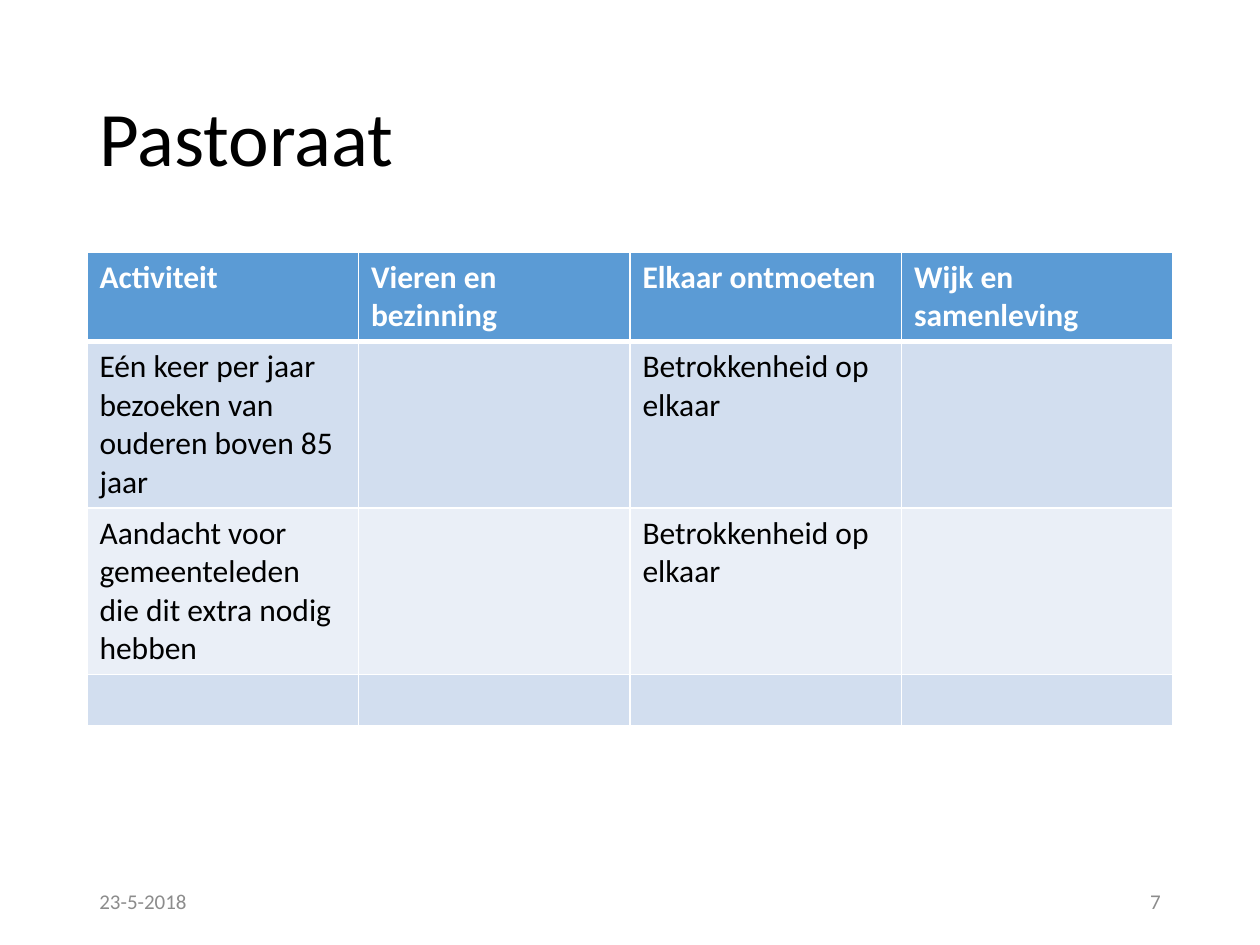
from dataclasses import dataclass

from lxml import etree
from pptx import Presentation
from pptx.dml.color import RGBColor
from pptx.enum import text
from pptx.oxml.ns import qn
from pptx.util import Inches, Pt

FONT = "Calibri"
WHITE, BLACK, GREY = "FFFFFF", "000000", "8C8C8C"
HEADER_FILL = "5B9BD5"
BAND_FILLS = ("D2DEEF", "EAEFF7")
LEFT, WIDTH = 0.69, 8.62
FOOTER_WIDTH = 2.25


@dataclass
class TableRow:
    height: float
    cells: tuple


@dataclass
class FooterItem:
    left: float
    wording: str
    alignment: text.PP_ALIGN


ROWS = (
    TableRow(0.7, ("Activiteit", "Vieren en bezinning", "Elkaar ontmoeten",
                   "Wijk en samenleving")),
    TableRow(1.32, ("Eén keer per jaar bezoeken van ouderen boven 85 jaar", "",
                    "Betrokkenheid op elkaar", "")),
    TableRow(1.32, ("Aandacht voor gemeenteleden die dit extra nodig hebben", "",
                    "Betrokkenheid op elkaar", "")),
    TableRow(0.4, ("", "", "", "")),
)
FOOTER = (
    FooterItem(LEFT, "23-5-2018", text.PP_ALIGN.LEFT),
    FooterItem(LEFT + WIDTH - FOOTER_WIDTH, "7", text.PP_ALIGN.RIGHT),
)


def color(value: str) -> RGBColor:
    return RGBColor.from_string(value)


def write(frame, wording: str, size: float, ink: str, bold: bool = False,
          alignment=text.PP_ALIGN.LEFT) -> None:
    frame.text = wording
    paragraph = frame.paragraphs[0]
    paragraph.alignment = alignment
    paragraph.font.size = Pt(size)
    for run in paragraph.runs:
        run.font.name = FONT
        run.font.size = Pt(size)
        run.font.bold = bold
        run.font.color.rgb = color(ink)


def set_borders(cell, top: float, bottom: float) -> None:
    """Give the cell white borders, 1 pt at the sides."""
    properties = cell._tc.get_or_add_tcPr()
    widths = {"a:lnL": 1, "a:lnR": 1, "a:lnT": top, "a:lnB": bottom}
    for position, (tag, width) in enumerate(widths.items()):
        line = etree.Element(qn(tag), w=str(Pt(width)))
        fill = etree.SubElement(line, qn("a:solidFill"))
        etree.SubElement(fill, qn("a:srgbClr"), val=WHITE)
        properties.insert(position, line)


def add_title(slide, wording: str) -> None:
    title = slide.shapes.title
    title.left, title.top = Inches(LEFT), Inches(0.4)
    title.width, title.height = Inches(WIDTH), Inches(1.45)
    title.text_frame.vertical_anchor = text.MSO_ANCHOR.MIDDLE
    write(title.text_frame, wording, 44, BLACK)
    title.text_frame.paragraphs[0].line_spacing = 0.9


def add_activity_table(slide, rows: tuple) -> None:
    column_count = len(rows[0].cells)
    height = sum(row.height for row in rows)
    table = slide.shapes.add_table(
        len(rows), column_count, Inches(LEFT), Inches(2),
        Inches(WIDTH), Inches(height)).table
    for column in table.columns:
        column.width = Inches(WIDTH / column_count)
    for row_index, row in enumerate(rows):
        table.rows[row_index].height = Inches(row.height)
        header = row_index == 0
        fill = HEADER_FILL if header else BAND_FILLS[(row_index - 1) % 2]
        for column_index, wording in enumerate(row.cells):
            cell = table.cell(row_index, column_index)
            cell.fill.solid()
            cell.fill.fore_color.rgb = color(fill)
            write(cell.text_frame, wording, 18, WHITE if header else BLACK, header)
            set_borders(cell, 3 if row_index == 1 else 1, 3 if header else 1)


def add_footer_item(slide, item: FooterItem) -> None:
    box = slide.shapes.add_textbox(Inches(item.left), Inches(6.95),
                                   Inches(FOOTER_WIDTH), Inches(0.4))
    box.text_frame.word_wrap = True
    box.text_frame.vertical_anchor = text.MSO_ANCHOR.MIDDLE
    write(box.text_frame, item.wording, 12, GREY, alignment=item.alignment)


def main() -> None:
    presentation = Presentation()
    presentation.slide_width, presentation.slide_height = Inches(10), Inches(7.5)
    slide = presentation.slides.add_slide(presentation.slide_layouts[5])
    add_title(slide, "Pastoraat")
    add_activity_table(slide, ROWS)
    for item in FOOTER:
        add_footer_item(slide, item)
    presentation.save("out.pptx")


if __name__ == "__main__":
    main()
